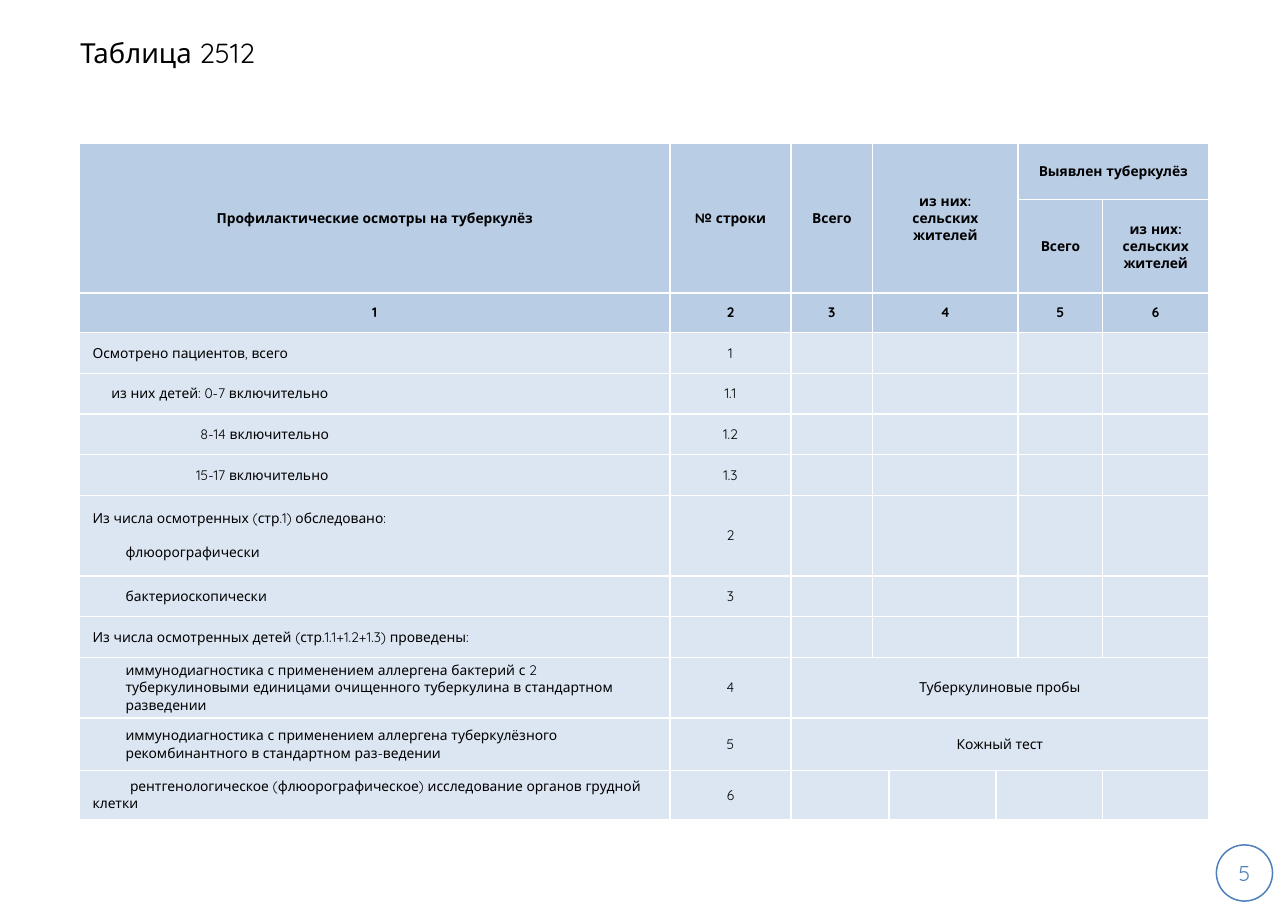
from lxml import etree
from pptx import Presentation
from pptx.dml.color import RGBColor
from pptx.enum.shapes import MSO_SHAPE
from pptx.enum.text import MSO_ANCHOR, PP_ALIGN
from pptx.oxml.ns import qn
from pptx.util import Inches, Pt

LEFT, CENTER = PP_ALIGN.LEFT, PP_ALIGN.CENTER
MIDDLE = MSO_ANCHOR.MIDDLE
OVAL = MSO_SHAPE.OVAL
FONT = "Quicksand"
COLORS = {"text": "000000", "head": "B9CDE5", "body": "DCE6F2",
          "edge": "FFFFFF", "badge": "4F81BD"}
COLS = [5.36, 1.1, 0.74, 0.15, 0.97, 0.2, 0.77, 0.96]
ROWS = [0.51, 0.85, 0.36] + [0.37] * 4 + [0.73, 0.37, 0.37, 0.53, 0.48, 0.44]
HEADS = 3
SPANS = [(0, 0, 1, 0), (0, 1, 1, 1), (0, 2, 1, 2), (0, 3, 1, 5), (0, 6, 0, 7),
         *[(row, 3, row, 5) for row in range(2, 10)],
         (10, 2, 10, 7), (11, 2, 11, 7), (12, 2, 12, 3), (12, 5, 12, 6)]
TITLES = {
    (0, 0): "Профилактические осмотры на туберкулёз",
    (0, 1): "№ строки",
    (0, 2): "Всего",
    (0, 3): "из них: сельских жителей",
    (0, 6): "Выявлен туберкулёз",
    (1, 6): "Всего",
    (1, 7): "из них: сельских жителей",
    (2, 0): "1", (2, 1): "2", (2, 2): "3",
    (2, 3): "4", (2, 6): "5", (2, 7): "6",
}
ITEMS = [
    ("Осмотрено пациентов, всего", "1", {}),
    ("из них детей: 0-7 включительно", "1.1", {"left": 0.17}),
    ("8-14 включительно", "1.2", {"left": 0.98}),
    ("15-17 включительно", "1.3", {"left": 0.94}),
    ("Из числа осмотренных (стр.1) обследовано:", "2", {}),
    ("бактериоскопически", "3", {"left": 0.3}),
    ("Из числа осмотренных детей (стр.1.1+1.2+1.3) проведены:", "", {}),
    ("иммунодиагностика с применением аллергена бактерий с 2 "
     "туберкулиновыми единицами очищенного туберкулина в стандартном "
     "разведении", "4", {"left": 0.3}),
    ("иммунодиагностика с применением аллергена туберкулёзного "
     "рекомбинантного в стандартном раз-ведении", "5", {"left": 0.3}),
    ("рентгенологическое (флюорографическое) исследование органов грудной "
     "клетки", "6", {"first": 0.34}),
]
TESTS = {10: "Туберкулиновые пробы", 11: "Кожный тест"}


def paint(fill, name):
    fill.solid()
    fill.fore_color.rgb = RGBColor.from_string(COLORS[name])


def write(frame, text, size=9, bold=False, color="text", align=LEFT,
          left=0, first=0, before=0, more=False):
    para = frame.add_paragraph() if more else frame.paragraphs[0]
    para.alignment = align
    if before:
        para.space_before = Pt(before)
    props = para._p.get_or_add_pPr()
    props.set("marL", str(Inches(left)))
    props.set("indent", str(Inches(first)))
    run = para.add_run()
    run.text = text
    font = run.font
    font.name, font.size, font.bold = FONT, Pt(size), bold
    paint(font.fill, color)


def inset(box, left, top, right, bottom):
    box.margin_left, box.margin_top = Inches(left), Inches(top)
    box.margin_right, box.margin_bottom = Inches(right), Inches(bottom)
    box.vertical_anchor = MIDDLE


def edge(cell):
    props = cell._tc.get_or_add_tcPr()
    for side in "LRTB":
        line = etree.SubElement(props, qn(f"a:ln{side}"), w=str(Pt(1)))
        solid = etree.SubElement(line, qn("a:solidFill"))
        etree.SubElement(solid, qn("a:srgbClr"), val=COLORS["edge"])


def blank(cell):
    para = cell.text_frame.paragraphs[0]._p
    if para.find(qn("a:r")) is None:
        etree.SubElement(para, qn("a:endParaRPr"), sz="900")


def add_title(slide, text):
    title = slide.shapes.title
    title.left, title.top = Inches(0.73), Inches(0)
    title.width, title.height = Inches(10.97), Inches(0.95)
    inset(title.text_frame, 0, 0.05, 0.1, 0.05)
    write(title.text_frame, text, size=18)


def add_badge(slide, text):
    badge = slide.shapes.add_shape(OVAL, Inches(11.04), Inches(7.67),
                                   Inches(0.51), Inches(0.51))
    badge.shadow.inherit = False
    badge.fill.background()
    paint(badge.line.fill, "badge")
    badge.line.width = Pt(1)
    inset(badge.text_frame, 0, 0, 0, 0)
    write(badge.text_frame, text, size=14, color="badge", align=CENTER)


def add_grid(slide):
    grid = slide.shapes.add_table(
        len(ROWS), len(COLS), Inches(0.72), Inches(1.3),
        Inches(sum(COLS)), Inches(sum(ROWS))).table
    grid.first_row = grid.horz_banding = False
    for col, width in zip(grid.columns, COLS):
        col.width = Inches(width)
    for row, height in zip(grid.rows, ROWS):
        row.height = Inches(height)
    for top, left, low, right in SPANS:
        grid.cell(top, left).merge(grid.cell(low, right))
    for (row, col), text in TITLES.items():
        write(grid.cell(row, col).text_frame, text, bold=True, align=CENTER)
    for row, (label, code, form) in enumerate(ITEMS, HEADS):
        write(grid.cell(row, 0).text_frame, label, **form)
        if code:
            write(grid.cell(row, 1).text_frame, code, align=CENTER)
    write(grid.cell(7, 0).text_frame, "флюорографически",
          left=0.3, before=11, more=True)
    for row, text in TESTS.items():
        write(grid.cell(row, 2).text_frame, text, align=CENTER)
    for row in range(len(ROWS)):
        for col in range(len(COLS)):
            cell = grid.cell(row, col)
            inset(cell, 0.12, 0.04, 0.12, 0.04)
            edge(cell)
            paint(cell.fill, "head" if row < HEADS else "body")
            blank(cell)


def main():
    deck = Presentation()
    deck.slide_width, deck.slide_height = Inches(11.69), Inches(8.27)
    slide = deck.slides.add_slide(deck.slide_layouts[5])
    add_badge(slide, "5")
    add_title(slide, "Таблица 2512")
    add_grid(slide)
    deck.save("out.pptx")


if __name__ == "__main__":
    main()
